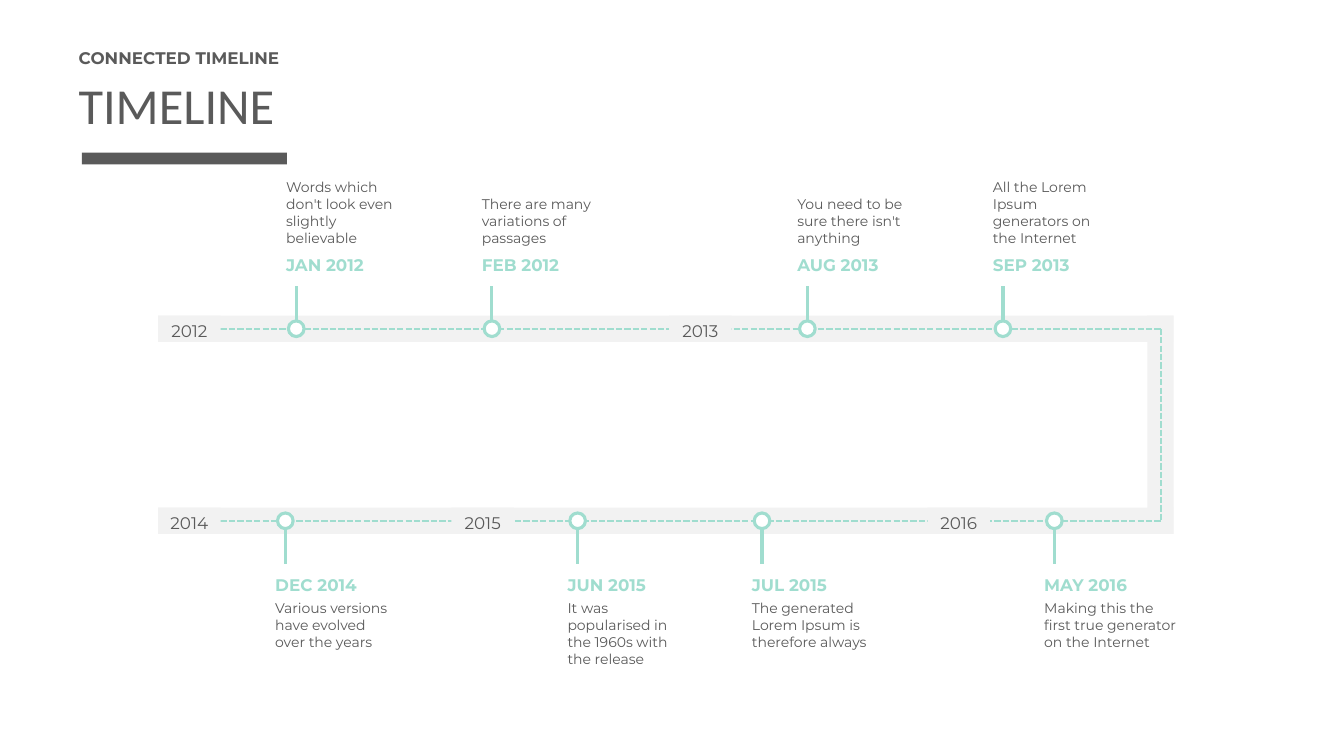
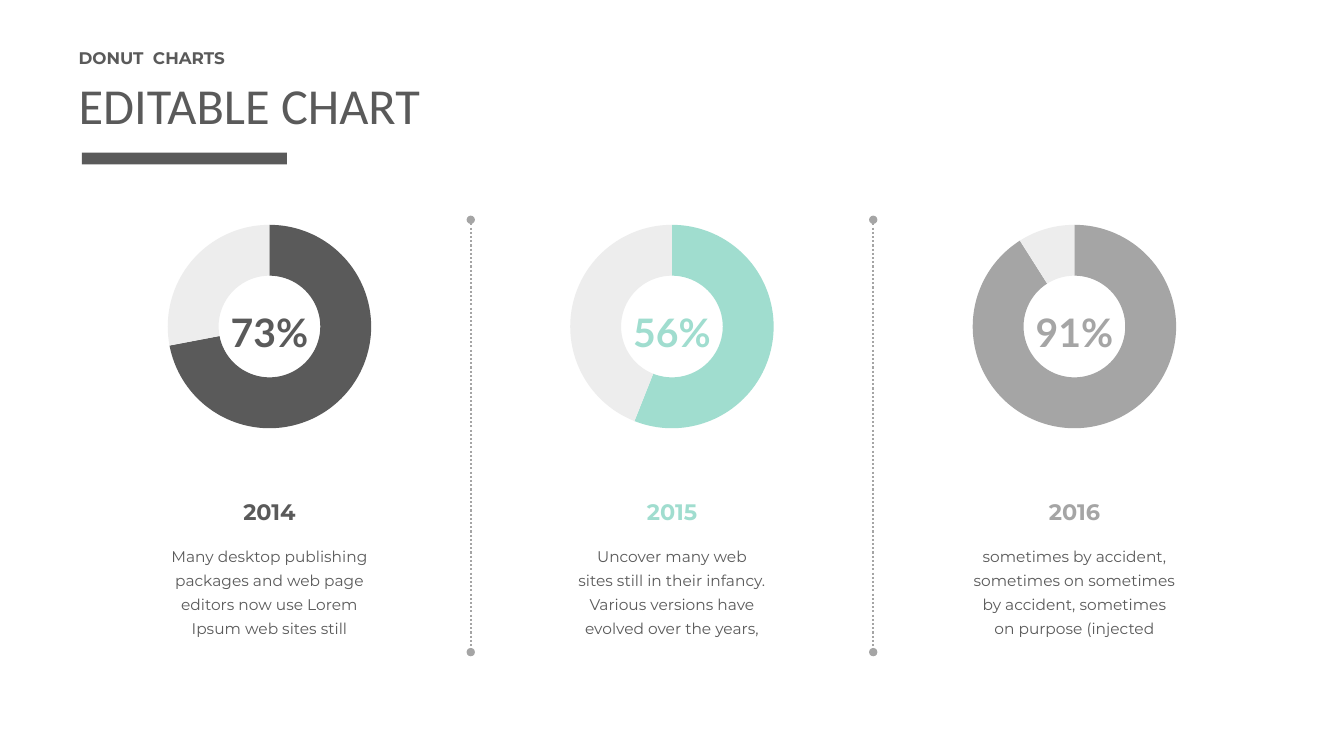
import copy
from dataclasses import dataclass
from typing import Any

import pptx
import pptx.chart.data
import pptx.dml.color
import pptx.enum.chart
import pptx.enum.dml
import pptx.enum.shapes
import pptx.enum.text
import pptx.oxml.ns
import pptx.oxml.xmlchemy
import pptx.util

Pt = pptx.util.Pt
RGB = pptx.dml.color.RGBColor
Align = pptx.enum.text.PP_ALIGN
Anchor = pptx.enum.text.MSO_ANCHOR
Dash = pptx.enum.dml.MSO_LINE
Preset = pptx.enum.shapes.MSO_SHAPE
qn = pptx.oxml.ns.qn
new_element = pptx.oxml.xmlchemy.OxmlElement


@dataclass(frozen=True)
class Theme:
    dark: RGB = RGB.from_string("5A5A5A")
    mint: RGB = RGB.from_string("A0DDCF")
    grey: RGB = RGB.from_string("A5A5A5")
    rest: RGB = RGB.from_string("EDEDED")
    road: RGB = RGB.from_string("F2F2F2")
    white: RGB = RGB.from_string("FFFFFF")
    black: RGB = RGB.from_string("000000")
    title_font: str = "Calibri"
    body_font: str = "Montserrat"
    number_font: str = "Lato"
    title: float = 36
    percent: float = 28
    year: float = 16
    label: float = 12
    copy: float = 11
    small: float = 10


THEME = Theme()


@dataclass(frozen=True)
class Area:
    left: float
    top: float
    width: float
    height: float


@dataclass(frozen=True)
class TextStyle:
    size: float
    colour: RGB = THEME.dark
    font: str = THEME.body_font
    bold: bool = False
    align: Align = Align.LEFT
    anchor: Anchor = Anchor.MIDDLE
    spacing: float = 1.0
    insets: tuple[float, float, float, float] = (7.2, 3.6, 7.2, 3.6)
    wrap: bool = True


@dataclass(frozen=True)
class Stop:
    centre: float
    date: str
    note: str
    note_width: float = 98.6


@dataclass(frozen=True)
class YearTag:
    left: float
    year: str


@dataclass(frozen=True)
class Row:
    centre: float
    direction: int
    date_top: float
    note_top: float
    anchor: Anchor
    note_anchor: Anchor
    years: tuple[YearTag, ...]
    stops: tuple[Stop, ...]


@dataclass(frozen=True)
class Donut:
    share: int
    caption: str
    year: str
    note: str
    colour: RGB


ROAD = Area(113, 225.4, 725, 18.8)
DASH_LEFT = 157.5
DASH_RIGHT = 829
TAG_WIDTH = 44.6
DOT = 11.2
STEM = 25
STOP_INSETS = (5.8, 2.9, 7.2, 3.6)

ROWS = (
    Row(234.8, -1, 181.4, 141.1, Anchor.BOTTOM, Anchor.BOTTOM,
        (YearTag(113, "2012"), YearTag(478, "2013")),
        (Stop(211.6, "JAN 2012", "Words which don't look even slightly believable"),
         Stop(351.4, "FEB 2012", "There are many variations of passages"),
         Stop(576.7, "AUG 2013", "You need to be sure there isn't anything"),
         Stop(716.4, "SEP 2013", "All the Lorem Ipsum generators on the Internet"))),
    Row(372, 1, 409, 425.5, Anchor.MIDDLE, Anchor.TOP,
        (YearTag(113, "2014"), YearTag(322.5, "2015"), YearTag(662.5, "2016")),
        (Stop(203.8, "DEC 2014", "Various versions have evolved over the years"),
         Stop(412.6, "JUN 2015", "It was popularised in the 1960s with the release"),
         Stop(544.3, "JUL 2015", "The generated Lorem Ipsum is therefore always"),
         Stop(753.1, "MAY 2016", "Making this the first true generator on the Internet", 108))),
)

FIRST_COLUMN = 192.5
COLUMN_PITCH = 287.5
DONUTS = (
    Donut(72, "73%", "2014",
          "Many desktop publishing packages and web page editors now use Lorem Ipsum web sites still",
          THEME.dark),
    Donut(56, "56%", "2015",
          "Uncover many web\vsites still in their infancy. Various versions have evolved over the years,",
          THEME.mint),
    Donut(91, "91%", "2016",
          "sometimes by accident, sometimes on sometimes by accident, sometimes on purpose (injected",
          THEME.grey),
)


def assign(target: Any, values: dict[str, Any]) -> None:
    for name, value in values.items():
        setattr(target, name, value)


def place(area: Area) -> tuple[int, ...]:
    return tuple(Pt(value) for value in (area.left, area.top, area.width, area.height))


def write(shape: Any, text: str, style: TextStyle) -> None:
    frame = shape.text_frame
    left, top, right, bottom = style.insets
    assign(frame, {
        "word_wrap": style.wrap, "vertical_anchor": style.anchor,
        "margin_left": Pt(left), "margin_top": Pt(top),
        "margin_right": Pt(right), "margin_bottom": Pt(bottom),
    })
    para = frame.paragraphs[0]
    para.text = text
    assign(para, {"alignment": style.align, "line_spacing": style.spacing})
    for span in para.runs:
        assign(span.font, {"name": style.font, "size": Pt(style.size), "bold": style.bold})
        span.font.color.rgb = style.colour
    for line_break in para._p.findall(qn("a:br")):
        line_break.append(copy.deepcopy(para.runs[0]._r.rPr))


def add_text(page: Any, area: Area, text: str, style: TextStyle) -> None:
    write(page.shapes.add_textbox(*place(area)), text, style)


def add_block(page: Any, area: Area, fill: RGB, preset: Preset = Preset.RECTANGLE,
              outline: RGB | None = None) -> Any:
    shape = page.shapes.add_shape(preset, *place(area))
    shape.shadow.inherit = False
    shape.fill.solid()
    shape.fill.fore_color.rgb = fill
    if outline is None:
        shape.line.fill.background()
    else:
        shape.line.color.rgb = outline
        shape.line.width = Pt(2.25)
    return shape


def add_line(page: Any, start: tuple[float, float], end: tuple[float, float], colour: RGB,
             width: float, dash: Dash | None = None, oval_ends: bool = False) -> None:
    line = page.shapes.add_connector(
        pptx.enum.shapes.MSO_CONNECTOR.STRAIGHT, *(Pt(value) for value in start + end))
    line.line.color.rgb = colour
    assign(line.line, {"width": Pt(width), "dash_style": dash})
    properties = line._element.spPr
    if oval_ends:
        outline = properties.find(qn("a:ln"))
        for tag in ("a:headEnd", "a:tailEnd"):
            end_mark = new_element(tag)
            end_mark.set("type", "oval")
            outline.append(end_mark)
    properties.append(new_element("a:effectLst"))


def add_page(deck: Any, eyebrow: str, title: str) -> Any:
    page = deck.slides.add_slide(deck.slide_layouts[6])
    add_block(page, Area(58.5, 109, 146.5, 8.5), THEME.dark)
    add_text(page, Area(49, 49.7, 862, 50.4), title, TextStyle(THEME.title, font=THEME.title_font))
    add_text(page, Area(49, 28.8, 862, 24.5), eyebrow, TextStyle(THEME.label, bold=True))
    return page


def add_stop(page: Any, row: Row, stop: Stop) -> None:
    radius = DOT / 2
    add_block(page, Area(stop.centre - radius, row.centre - radius, DOT, DOT),
              THEME.white, Preset.OVAL, THEME.mint)
    stem_start = row.centre + row.direction * radius
    add_line(page, (stop.centre, stem_start),
             (stop.centre, stem_start + row.direction * STEM), THEME.mint, 2.25)
    left = stop.centre - 13
    add_text(page, Area(left, row.date_top, 76.3, 18.7), stop.date,
             TextStyle(THEME.label, THEME.mint, bold=True, anchor=row.anchor, insets=STOP_INSETS))
    add_text(page, Area(left, row.note_top, stop.note_width, 38.2), stop.note,
             TextStyle(THEME.small, anchor=row.note_anchor, insets=STOP_INSETS))


def build_timeline(deck: Any) -> None:
    page = add_page(deck, "CONNECTED TIMELINE", "TIMELINE")
    top, bottom = (row.centre for row in ROWS)
    half = ROAD.height / 2
    add_block(page, Area(DASH_RIGHT - half, top - half, ROAD.height, bottom - top + ROAD.height),
              THEME.road)
    for row in ROWS:
        add_block(page, Area(ROAD.left, row.centre - half, ROAD.width, ROAD.height), THEME.road)
        add_line(page, (DASH_LEFT, row.centre), (DASH_RIGHT, row.centre),
                 THEME.mint, 1.5, Dash.SQUARE_DOT)
    add_line(page, (DASH_RIGHT, top), (DASH_RIGHT, bottom), THEME.mint, 1.5, Dash.SQUARE_DOT)
    tag_style = TextStyle(THEME.label, align=Align.CENTER, insets=(7.2, 5.8, 7.2, 3.6))
    for row in ROWS:
        for tag in row.years:
            block = add_block(page, Area(tag.left, row.centre - half, TAG_WIDTH, ROAD.height),
                              THEME.road)
            write(block, tag.year, tag_style)
        for stop in row.stops:
            add_stop(page, row, stop)


def set_plot_area(chart: Any, values: dict[str, float]) -> None:
    plot_area = chart._chartSpace.chart.plotArea
    for old in plot_area.findall(qn("c:layout")):
        plot_area.remove(old)
    layout = new_element("c:layout")
    manual = new_element("c:manualLayout")
    layout.append(manual)
    settings = {"layoutTarget": "inner", "xMode": "edge", "yMode": "edge", **values}
    for name, value in settings.items():
        item = new_element(f"c:{name}")
        item.set("val", str(value))
        manual.append(item)
    plot_area.insert(0, layout)


def add_donut(page: Any, centre: float, donut: Donut) -> None:
    data = pptx.chart.data.CategoryChartData()
    data.categories = ["1", "2"]
    data.add_series("Series 1", (donut.share, 100 - donut.share))
    chart = page.shapes.add_chart(
        pptx.enum.chart.XL_CHART_TYPE.DOUGHNUT,
        *place(Area(centre - 125.3, 149.8, 250.6, 167)), data).chart
    assign(chart, {"has_legend": False, "has_title": False})
    assign(chart.font, {"name": THEME.body_font, "size": Pt(THEME.small)})
    chart.font.color.rgb = THEME.black
    set_plot_area(chart, {"x": 0.21, "y": 0.06, "w": 0.58, "h": 0.88})
    chart._chartSpace.find(".//" + qn("c:holeSize")).set("val", "70")
    for index, colour in enumerate((donut.colour, THEME.rest)):
        point = chart.plots[0].series[0].points[index].format
        point.fill.solid()
        point.fill.fore_color.rgb = colour
        point.line.fill.background()


def build_donuts(deck: Any) -> None:
    page = add_page(deck, "DONUT  CHARTS", "EDITABLE CHART")
    centred = {"align": Align.CENTER, "spacing": 1.3}
    flush = (7.2, 0, 7.2, 3.6)
    for index, donut in enumerate(DONUTS):
        centre = FIRST_COLUMN + index * COLUMN_PITCH
        if index:
            divider = centre - COLUMN_PITCH / 2
            add_line(page, (divider, 157), (divider, 465.8), THEME.grey, 1.5,
                     Dash.ROUND_DOT, oval_ends=True)
        add_text(page, Area(centre - 79.5, 383.8, 159, 84.2), donut.note,
                 TextStyle(THEME.copy, anchor=Anchor.TOP, insets=(7.2, 2.9, 7.2, 3.6), **centred))
        add_text(page, Area(centre - 79.5, 350, 159, 33.8), donut.year,
                 TextStyle(THEME.year, donut.colour, bold=True, anchor=Anchor.TOP,
                           insets=flush, **centred))
        add_donut(page, centre, donut)
        add_text(page, Area(centre - 36, 216.7, 72, 33.8), donut.caption,
                 TextStyle(THEME.percent, donut.colour, THEME.number_font, True,
                           insets=flush, wrap=False, **centred))


def main() -> None:
    deck = pptx.Presentation()
    assign(deck, {"slide_width": Pt(960), "slide_height": Pt(540)})
    build_timeline(deck)
    build_donuts(deck)
    deck.save("out.pptx")


if __name__ == "__main__":
    main()
